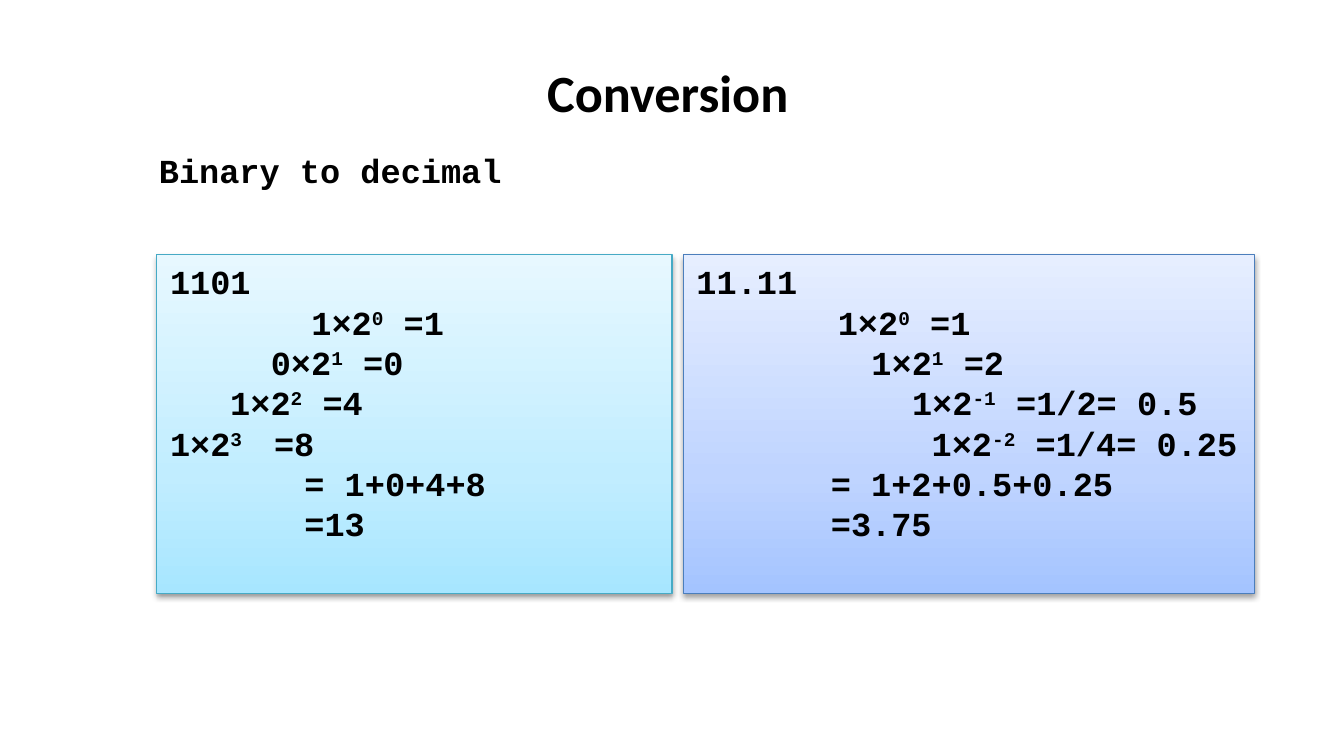
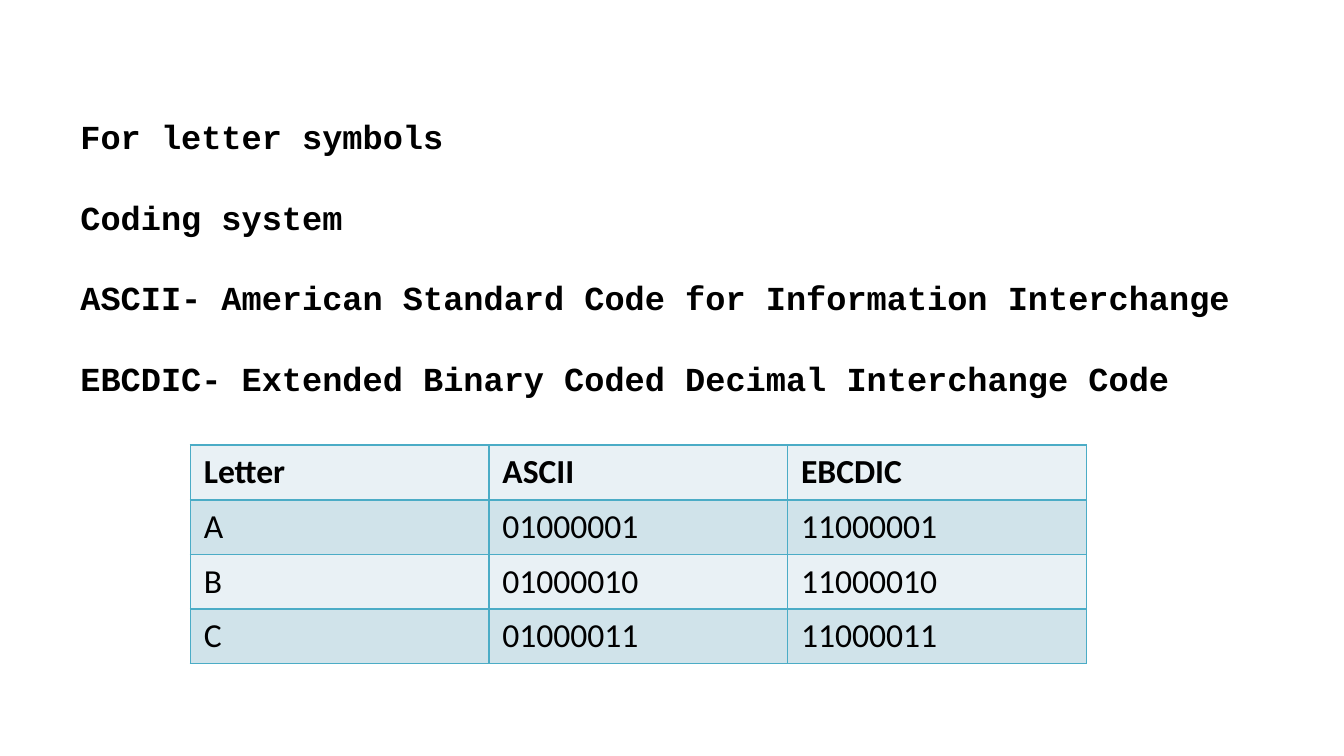
"""Build two slides on binary conversion and letter coding."""
import copy
import dataclasses

import lxml.etree
import pptx
import pptx.dml.color
import pptx.enum.shapes
import pptx.enum.text
import pptx.oxml.ns
import pptx.util

PX = 9525
qn = pptx.oxml.ns.qn


@dataclasses.dataclass(frozen=True)
class Theme:
    sans: str = "Calibri"
    mono: str = "Courier New"
    ink: str = "000000"
    title: int = 28
    body: int = 18
    blank_line: float = 21.6
    stops: tuple = (0, 0.35, 1)
    aqua: tuple = ("A7E6FF", "C1EDFF", "E7F8FF")
    aqua_line: str = "46AAC5"
    blue: tuple = ("A4C4FF", "BFD4FF", "E6EEFF")
    blue_line: str = "4B7EBC"
    bands: tuple = ("E9F1F5", "D0E3EA")
    grid: str = "4BACC6"


THEME = Theme()


def px(n):
    return pptx.util.Emu(n * PX)


def rgb(code):
    return pptx.dml.color.RGBColor.from_string(code)


def add(parent, tag, **attrs):
    return lxml.etree.SubElement(parent, qn(tag), {k: str(v) for k, v in attrs.items()})


def write(tf, lines, size=THEME.body, font=THEME.mono, bold=True, align="LEFT", gap=0):
    """Write (text, indent) lines; parts between carets are superscript."""
    tf.word_wrap = True
    tf.vertical_anchor = pptx.enum.text.MSO_ANCHOR.TOP
    for i, (text, indent) in enumerate(lines):
        p = tf.add_paragraph() if i else tf.paragraphs[0]
        p.alignment = getattr(pptx.enum.text.PP_ALIGN, align)
        p.space_before = pptx.util.Pt(gap if i else 0)
        p._p.get_or_add_pPr().set("marL", str(px(indent)))
        for j, part in enumerate(text.split("^")):
            r = p.add_run()
            r.text = part
            r.font.name, r.font.size, r.font.bold = font, pptx.util.Pt(size), bold
            r.font.color.rgb = rgb(THEME.ink)
            if j % 2:
                r._r.get_or_add_rPr().set("baseline", "30000")


class Deck:
    def __init__(self, theme):
        self.theme = theme
        self.prs = pptx.Presentation()
        self.prs.slide_width, self.prs.slide_height = px(960), px(540)
        self.s = None

    def slide(self):
        self.s = self.prs.slides.add_slide(self.prs.slide_layouts[6])

    def text(self, box, lines, **fmt):
        sp = self.s.shapes.add_textbox(*map(px, box))
        write(sp.text_frame, lines, **fmt)

    def panel(self, box, lines, colors, outline):
        sp = self.s.shapes.add_shape(pptx.enum.shapes.MSO_SHAPE.RECTANGLE, *map(px, box))
        sp.fill.gradient()
        sp.fill.gradient_angle = 90
        stops = sp._element.spPr.find(".//" + qn("a:gsLst"))
        stops.insert(1, copy.deepcopy(stops[0]))
        for stop, position, color in zip(sp.fill.gradient_stops, self.theme.stops, colors):
            stop.position = position
            stop.color.rgb = rgb(color)
        sp.line.color.rgb = rgb(outline)
        sp.line.width = pptx.util.Pt(0.75)
        sp.shadow.inherit = False
        effects = sp._element.spPr.find(qn("a:effectLst"))
        shadow = add(effects, "a:outerShdw", blurRad=40000, dist=20000, dir=5400000, rotWithShape=0)
        add(add(shadow, "a:srgbClr", val=self.theme.ink), "a:alpha", val=38000)
        write(sp.text_frame, lines)

    def table(self, box, rows):
        frame = self.s.shapes.add_table(len(rows), len(rows[0]), *map(px, box))
        table = frame.table
        table.first_row = table.horz_banding = False
        for i, row in enumerate(rows):
            for j, value in enumerate(row):
                cell = table.cell(i, j)
                tc_pr = cell._tc.get_or_add_tcPr()
                for side in "LRTB":
                    ln = add(tc_pr, f"a:ln{side}", w=pptx.util.Pt(1))
                    add(add(ln, "a:solidFill"), "a:srgbClr", val=self.theme.grid)
                cell.fill.solid()
                cell.fill.fore_color.rgb = rgb(self.theme.bands[i % 2])
                write(cell.text_frame, [(value, 0)], font=self.theme.sans, bold=i == 0)


def conversion(deck):
    t = deck.theme
    deck.slide()
    deck.text((257, 38, 440, 55), [("Conversion", 0)], size=t.title, font=t.sans, align="CENTER")
    deck.text((104, 102, 264, 38), [("Binary to decimal", 0)])
    whole = [("1101", 0), ("1×2^0^ =1", 101), ("0×2^1^ =0", 72), ("1×2^2^ =4", 43),
             ("1×2^3 ^ =8", 0), ("= 1+0+4+8", 96), ("=13", 96)]
    fraction = [("11.11", 0), ("1×2^0^ =1", 101), ("1×2^1^ =2", 125), ("1×2^-1^ =1/2= 0.5", 154),
                ("1×2^-2^ =1/4= 0.25", 168), ("= 1+2+0.5+0.25", 96), ("=3.75", 96)]
    deck.panel((112, 182, 368, 242), whole, t.aqua, t.aqua_line)
    deck.panel((488, 182, 408, 242), fraction, t.blue, t.blue_line)


def letter_codes(deck):
    deck.slide()
    lines = ["For letter symbols", "Coding system",
             "ASCII- American Standard Code for Information Interchange",
             "EBCDIC- Extended Binary Coded Decimal Interchange Code"]
    deck.text((48, 78, 856, 213), [(line, 0) for line in lines], gap=deck.theme.blank_line)
    deck.table((136, 318, 640, 156), [
        ("Letter", "ASCII", "EBCDIC"),
        ("A", "01000001", "11000001"),
        ("B", "01000010", "11000010"),
        ("C", "01000011", "11000011"),
    ])


def main():
    deck = Deck(THEME)
    conversion(deck)
    letter_codes(deck)
    deck.prs.save("out.pptx")


if __name__ == "__main__":
    main()
